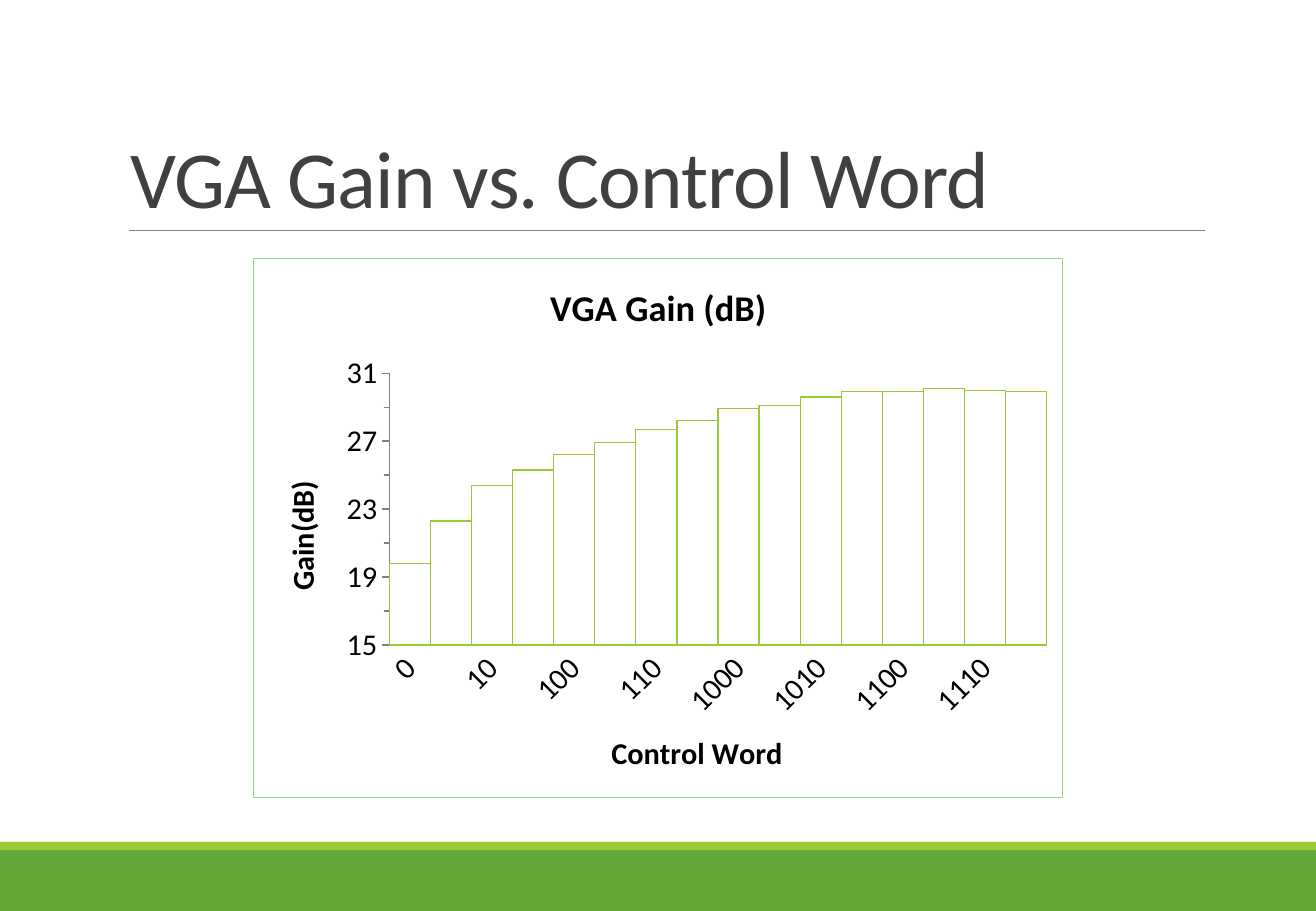
from lxml.etree import SubElement
from pptx import Presentation
from pptx.chart.data import CategoryChartData
from pptx.dml.color import RGBColor
from pptx.enum.chart import XL_CHART_TYPE as ChartType, XL_TICK_MARK as Tick
from pptx.enum.shapes import MSO_CONNECTOR as Connector, MSO_SHAPE as Shape
from pptx.enum.text import MSO_ANCHOR as Anchor
from pptx.oxml import parse_xml
from pptx.oxml.ns import nsdecls, qn
from pptx.util import Pt

TITLE = "VGA Gain vs. Control Word"
SERIES = "VGA Gain (dB)"
GAINS = [19.8, 22.3, 24.4, 25.3, 26.2, 26.9, 27.7, 28.2,
         28.9, 29.1, 29.6, 29.9, 29.9, 30.1, 30, 29.9]
WORDS = [f"{number:b}" for number in range(len(GAINS))]
COLORS = {"band": "63A537", "lime": "99CB38", "rule": "808080",
          "title": "404040", "text": "000000", "border": "9FD47D"}
BANDS = [("band", 504, 36), ("lime", 499, 5)]
FONT = "Calibri"
WIDTH, HEIGHT = 780, 540
CHART_WIDTH, CHART_HEIGHT = 480, 320


def color(name):
    return RGBColor.from_string(COLORS[name])


def style_font(font, size, name, bold=False):
    font.name, font.size, font.bold = FONT, Pt(size), bold
    font.color.rgb = color(name)


def style_line(line, name, width):
    line.color.rgb = color(name)
    line.width = Pt(width)


def add_bands(page):
    for name, top, height in BANDS:
        band = page.shapes.add_shape(Shape.RECTANGLE, 0, Pt(top), Pt(WIDTH), Pt(height))
        band.shadow.inherit = False
        band.fill.solid()
        band.fill.fore_color.rgb = color(name)
        band.line.fill.background()


def add_heading(page):
    rule = page.shapes.add_connector(Connector.STRAIGHT, Pt(76.5), Pt(136.7), Pt(714), Pt(136.7))
    style_line(rule.line, "rule", 0.5)
    SubElement(rule._element.spPr, qn("a:effectLst"))
    box = page.shapes.add_textbox(Pt(70), Pt(22.5), Pt(644), Pt(114.3))
    frame = box.text_frame
    frame.word_wrap = True
    frame.vertical_anchor = Anchor.BOTTOM
    para = frame.paragraphs[0]
    para.line_spacing = 0.85
    span = para.add_run()
    span.text = TITLE
    style_font(span.font, 48, "title")
    span.font._element.set("spc", "-50")


def place(owner, index, **points):
    for old in owner.findall(qn("c:layout")):
        owner.remove(old)
    modes = {"xMode": "edge", "yMode": "edge"}
    if "w" in points:
        modes = {"layoutTarget": "inner"} | modes
    sizes = {"x": CHART_WIDTH, "y": CHART_HEIGHT, "w": CHART_WIDTH, "h": CHART_HEIGHT}
    fractions = {key: value / sizes[key] for key, value in points.items()}
    parts = "".join(f'<c:{key} val="{value}"/>' for key, value in (modes | fractions).items())
    owner.insert(index, parse_xml(
        f'<c:layout {nsdecls("c")}><c:manualLayout>{parts}</c:manualLayout></c:layout>'))


def add_title(title, text, size, x, y):
    span = title.text_frame.paragraphs[0].add_run()
    span.text = text
    style_font(span.font, size, "text", True)
    place(title._element, 1, x=x, y=y)


def add_gain_chart(page):
    data = CategoryChartData()
    data.categories = WORDS
    data.add_series(SERIES, GAINS)
    chart = page.shapes.add_chart(ChartType.COLUMN_CLUSTERED, Pt(150), Pt(153),
                                  Pt(CHART_WIDTH), Pt(CHART_HEIGHT), data).chart
    style_font(chart.font, 18, "text")
    chart.has_legend = False
    add_title(chart.chart_title, SERIES, 21.6, 172, 10)

    plot = chart.plots[0]
    plot.gap_width = 0
    plot.vary_by_categories = False
    bars = plot.series[0].format
    bars.fill.background()
    style_line(bars.line, "lime", 0.75)

    words, gains = chart.category_axis, chart.value_axis
    add_title(words.axis_title, "Control Word", 18, 209, 278)
    add_title(gains.axis_title, "Gain(dB)", 18, 13, 128.7)
    gains.axis_title.text_frame._txBody.bodyPr.set("rot", "-5400000")
    for axis in (words, gains):
        axis.has_major_gridlines = False
        style_line(axis.format.line, "rule", 0.75)
        style_font(axis.tick_labels.font, 18, "text")
    words.major_tick_mark = Tick.NONE
    words._element.txPr.bodyPr.set("rot", "-2700000")
    words._element.find(qn("c:noMultiLvlLbl")).addprevious(
        parse_xml(f'<c:tickLblSkip {nsdecls("c")} val="2"/>'))
    gains.minimum_scale, gains.maximum_scale = 15, 31
    gains.major_unit, gains.minor_unit = 4, 2
    gains.major_tick_mark = gains.minor_tick_mark = Tick.OUTSIDE
    gains.tick_labels.number_format = "0"
    gains.tick_labels.number_format_is_linked = False

    space = chart._chartSpace
    place(space.chart.plotArea, 0, x=80.5, y=68, w=390.3, h=161.5)
    space.chart.addnext(parse_xml(
        f'<c:spPr {nsdecls("c", "a")}><a:noFill/><a:ln w="{Pt(0.75)}"><a:solidFill>'
        f'<a:srgbClr val="{COLORS["border"]}"/></a:solidFill></a:ln></c:spPr>'))


def main():
    """Build the slide on VGA gain against control word."""
    deck = Presentation()
    deck.slide_width, deck.slide_height = Pt(WIDTH), Pt(HEIGHT)
    page = deck.slides.add_slide(deck.slide_layouts[6])
    add_bands(page)
    add_heading(page)
    add_gain_chart(page)
    deck.save("out.pptx")


if __name__ == "__main__":
    main()
